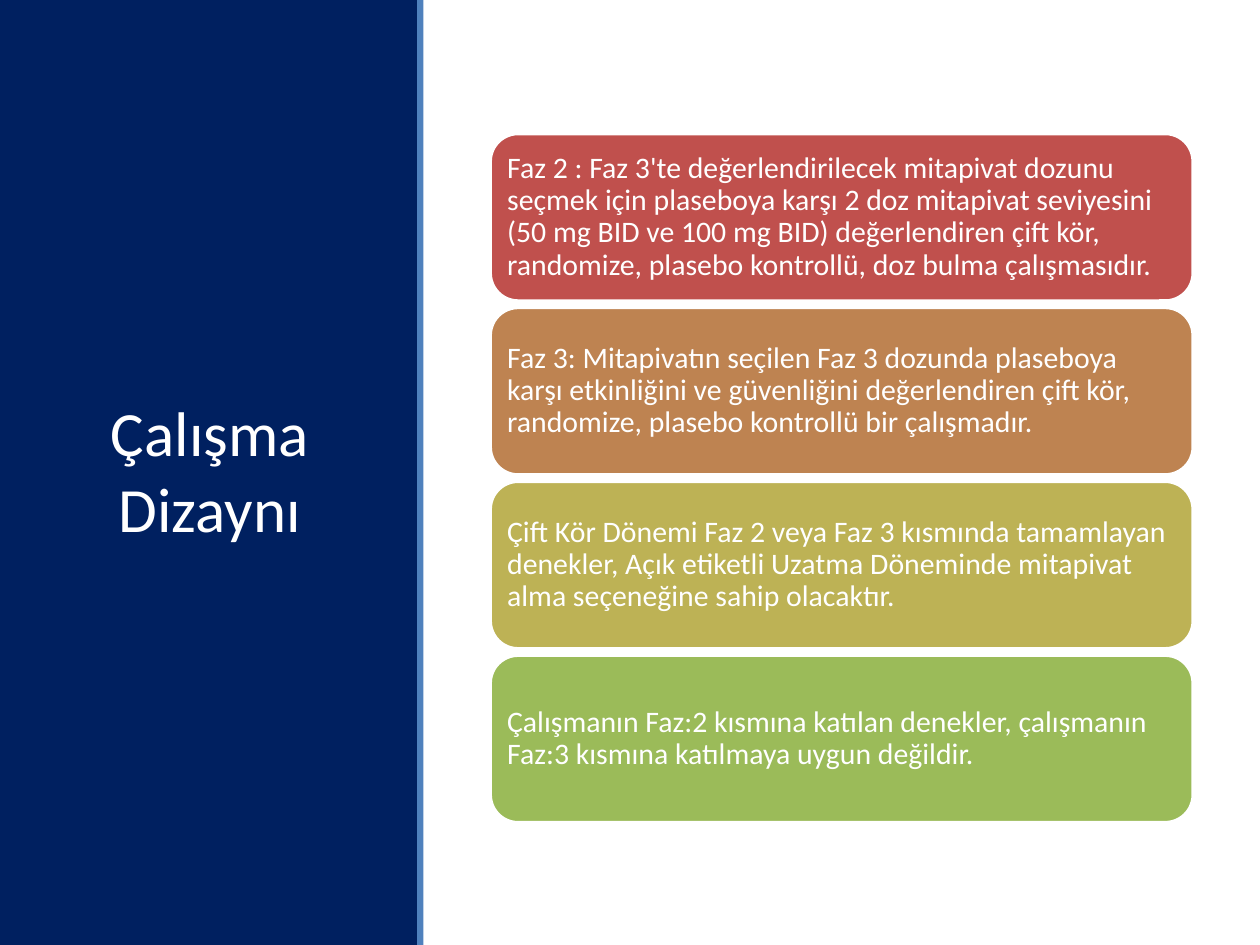
"""Build the study design slide with a title panel and four phase cards."""
from pptx import Presentation
from pptx.dml.color import RGBColor
from pptx.enum.shapes import MSO_SHAPE
from pptx.enum.text import MSO_ANCHOR, PP_ALIGN
from pptx.util import Inches, Pt

TITLE = "Çalışma Dizaynı"
CARDS = [
    ("red", "Faz 2 : Faz 3'te değerlendirilecek mitapivat dozunu seçmek için plaseboya "
            "karşı 2 doz mitapivat seviyesini (50 mg BID ve 100 mg BID) değerlendiren çift "
            "kör, randomize, plasebo kontrollü, doz bulma çalışmasıdır."),
    ("orange", "Faz 3: Mitapivatın seçilen Faz 3 dozunda plaseboya karşı etkinliğini ve "
               "güvenliğini değerlendiren çift kör, randomize, plasebo kontrollü bir "
               "çalışmadır."),
    ("olive", "Çift Kör Dönemi Faz 2 veya Faz 3 kısmında tamamlayan denekler, Açık etiketli "
              "Uzatma Döneminde mitapivat alma seçeneğine sahip olacaktır."),
    ("green", "Çalışmanın Faz:2 kısmına katılan denekler, çalışmanın Faz:3 kısmına katılmaya "
              "uygun değildir."),
]
COLOURS = {
    "navy": "002060", "blue": "4F81BD", "white": "FFFFFF", "red": "C0504D",
    "orange": "BE8351", "olive": "BDB255", "green": "9BBB59",
}
TITLE_FORMAT = {"size": Pt(36), "name": "Calibri"}
CARD_FORMAT = {"size": Pt(17), "name": "Calibri"}
CARD_LEFT, CARD_TOP, CARD_WIDTH, CARD_HEIGHT, CARD_STEP = 3.89, 1.06, 5.58, 1.33, 1.38
CARD_INSET = 0.07


def colour(name):
    return RGBColor.from_string(COLOURS[name])


def add_block(page, kind, place, fill, outline=None):
    block = page.shapes.add_shape(kind, *map(Inches, place))
    block.shadow.inherit = False
    block.fill.solid()
    block.fill.fore_color.rgb = colour(fill)
    if outline:
        block.line.color.rgb = colour(outline)
        block.line.width = Pt(2)
    else:
        block.line.fill.background()
    return block


def write_text(box, text, align, formats):
    frame = box.text_frame
    frame.word_wrap = True
    frame.vertical_anchor = MSO_ANCHOR.MIDDLE
    paragraph = frame.paragraphs[0]
    paragraph.alignment = align
    span = paragraph.add_run()
    span.text = text
    for attribute, value in formats.items():
        setattr(span.font, attribute, value)
    span.font.color.rgb = colour("white")
    return frame


def add_card(page, index, fill, text):
    place = (CARD_LEFT, CARD_TOP + index * CARD_STEP, CARD_WIDTH, CARD_HEIGHT)
    card = add_block(page, MSO_SHAPE.ROUNDED_RECTANGLE, place, fill, "white")
    frame = write_text(card, text, PP_ALIGN.LEFT, CARD_FORMAT)
    frame.paragraphs[0].line_spacing = 0.9
    for side in ("left", "top", "right", "bottom"):
        setattr(frame, f"margin_{side}", Inches(CARD_INSET))


def main():
    deck = Presentation()
    deck.slide_width, deck.slide_height = Inches(10), Inches(7.5)
    page = deck.slides.add_slide(deck.slide_layouts[6])
    add_block(page, MSO_SHAPE.RECTANGLE, (0, 0, 3.32, 7.5), "navy")
    title = page.shapes.add_textbox(*map(Inches, (0.4, 0.57, 2.53, 6.31)))
    write_text(title, TITLE, PP_ALIGN.CENTER, TITLE_FORMAT)
    add_block(page, MSO_SHAPE.RECTANGLE, (3.31, 0, 0.05, 7.5), "blue")
    for index, (fill, text) in enumerate(CARDS):
        add_card(page, index, fill, text)
    deck.save("out.pptx")


if __name__ == "__main__":
    main()
